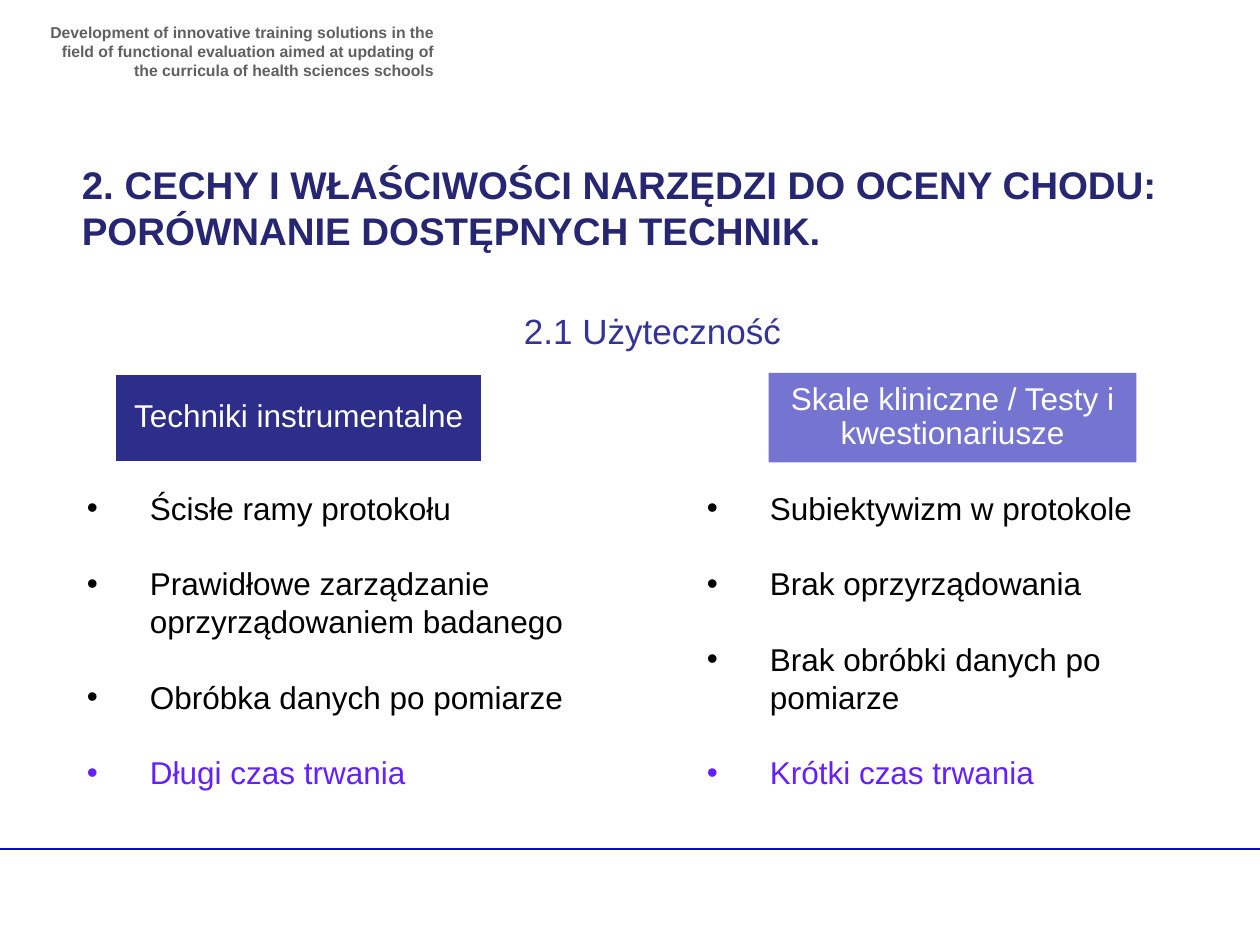
from dataclasses import dataclass

from lxml.etree import SubElement
from pptx import Presentation
from pptx.dml.color import RGBColor
from pptx.enum.shapes import MSO_CONNECTOR, MSO_SHAPE
from pptx.enum.text import MSO_ANCHOR, MSO_AUTO_SIZE, PP_ALIGN
from pptx.oxml.ns import qn
from pptx.util import Inches, Pt

COLUMNS, ROWS = 100, 75
SLIDE_WIDTH, SLIDE_HEIGHT = Inches(10), Inches(7.5)


@dataclass(frozen=True)
class Theme:
    font: str = "Arial"
    project: str = "606060"
    title: str = "262673"
    section: str = "333399"
    instrumental: str = "2D2D8A"
    clinical: str = "7575D1"
    body: str = "000000"
    highlight: str = "6520FF"
    light: str = "FFFFFF"
    rule: str = "0404E6"
    project_size: int = 9
    title_size: int = 22
    section_size: int = 20
    body_size: int = 18
    item_gap: float = 21.6


THEME = Theme()


def columns(count):
    return round(SLIDE_WIDTH * count / COLUMNS)


def rows(count):
    return round(SLIDE_HEIGHT * count / ROWS)


def grid_box(left, top, width, height):
    return columns(left), rows(top), columns(width), rows(height)


def style(paragraph, size, color, bold=False, align=PP_ALIGN.LEFT):
    paragraph.alignment = align
    for run in paragraph.runs:
        run.font.name = THEME.font
        run.font.size = Pt(size)
        run.font.bold = bold
        run.font.color.rgb = RGBColor.from_string(color)


def move(placeholder, box):
    placeholder.left, placeholder.top, placeholder.width, placeholder.height = box
    frame = placeholder.text_frame
    frame.auto_size = MSO_AUTO_SIZE.NONE
    frame.vertical_anchor = MSO_ANCHOR.TOP
    return frame


def fill_title(placeholder, text, box):
    frame = move(placeholder, box)
    frame.text = text
    style(frame.paragraphs[0], THEME.title_size, THEME.title, bold=True)


def add_label(slide, text, box, size, color, bold=False, align=PP_ALIGN.LEFT):
    frame = slide.shapes.add_textbox(*box).text_frame
    frame.word_wrap = True
    frame.text = text
    style(frame.paragraphs[0], size, color, bold, align)


def add_heading(slide, text, box, color, outlined):
    heading = slide.shapes.add_shape(MSO_SHAPE.RECTANGLE, *box)
    heading.shadow.inherit = False
    heading.fill.solid()
    heading.fill.fore_color.rgb = RGBColor.from_string(color)
    if outlined:
        heading.line.color.rgb = RGBColor.from_string(THEME.light)
        heading.line.width = Pt(2)
    else:
        heading.line.fill.background()
    frame = heading.text_frame
    frame.word_wrap = True
    frame.vertical_anchor = MSO_ANCHOR.MIDDLE
    frame.margin_left = frame.margin_right = columns(0.1)
    frame.margin_top = frame.margin_bottom = rows(0.1)
    frame.text = text
    frame.paragraphs[0].line_spacing = 0.9
    style(frame.paragraphs[0], THEME.body_size, THEME.light, align=PP_ALIGN.CENTER)


def add_bullet(paragraph):
    properties = paragraph._p.get_or_add_pPr()
    properties.set("marL", str(columns(5)))
    properties.set("indent", str(-columns(5)))
    SubElement(properties, qn("a:buFont")).set("typeface", THEME.font)
    SubElement(properties, qn("a:buChar")).set("char", "•")


def fill_list(placeholder, items, box):
    frame = move(placeholder, box)
    frame.text = "\n".join(items)
    for position, paragraph in enumerate(frame.paragraphs):
        add_bullet(paragraph)
        paragraph.space_before = Pt(THEME.item_gap if position else 0)
        is_last = position == len(items) - 1
        style(paragraph, THEME.body_size, THEME.highlight if is_last else THEME.body)


def add_rule(slide, row):
    rule = slide.shapes.add_connector(
        MSO_CONNECTOR.STRAIGHT, columns(-0.5), rows(row), columns(COLUMNS), rows(row)
    )
    rule.line.color.rgb = RGBColor.from_string(THEME.rule)
    rule.line.width = Pt(1)
    SubElement(rule._element.spPr, qn("a:effectLst"))


def main():
    presentation = Presentation()
    presentation.slide_width, presentation.slide_height = SLIDE_WIDTH, SLIDE_HEIGHT
    slide = presentation.slides.add_slide(
        presentation.slide_layouts.get_by_name("Two Content")
    )
    title, instrumental_list, clinical_list = list(slide.placeholders)[:3]

    add_rule(slide, 67.4)
    add_label(
        slide,
        "Development of innovative training solutions in the ﬁeld of functional "
        "evaluation aimed at updating of the curricula of health sciences schools",
        grid_box(2.8, 1.3, 32.6, 4.7),
        THEME.project_size, THEME.project, bold=True, align=PP_ALIGN.RIGHT,
    )
    fill_title(
        title,
        "2. CECHY I WŁAŚCIWOŚCI NARZĘDZI DO OCENY CHODU: "
        "PORÓWNANIE DOSTĘPNYCH TECHNIK.",
        grid_box(5.5, 12.3, 90.9, 8.4),
    )
    add_label(
        slide, "2.1 Użyteczność", grid_box(40.6, 24.1, 29.3, 7.7),
        THEME.section_size, THEME.section,
    )

    techniques = [
        ("Techniki instrumentalne", 9.1, THEME.instrumental, True,
         instrumental_list, 5.9, 45.7,
         ["Ścisłe ramy protokołu",
          "Prawidłowe zarządzanie oprzyrządowaniem badanego",
          "Obróbka danych po pomiarze",
          "Długi czas trwania"]),
        ("Skale kliniczne / Testy i kwestionariusze", 61, THEME.clinical, False,
         clinical_list, 55.1, 44.1,
         ["Subiektywizm w protokole",
          "Brak oprzyrządowania",
          "Brak obróbki danych po pomiarze",
          "Krótki czas trwania"]),
    ]
    for heading, left, color, outlined, body, body_left, body_width, items in techniques:
        add_heading(slide, heading, grid_box(left, 29.6, 29.2, 7.1), color, outlined)
        fill_list(body, items, grid_box(body_left, 38.3, body_width, 25.2))

    presentation.save("out.pptx")


if __name__ == "__main__":
    main()
